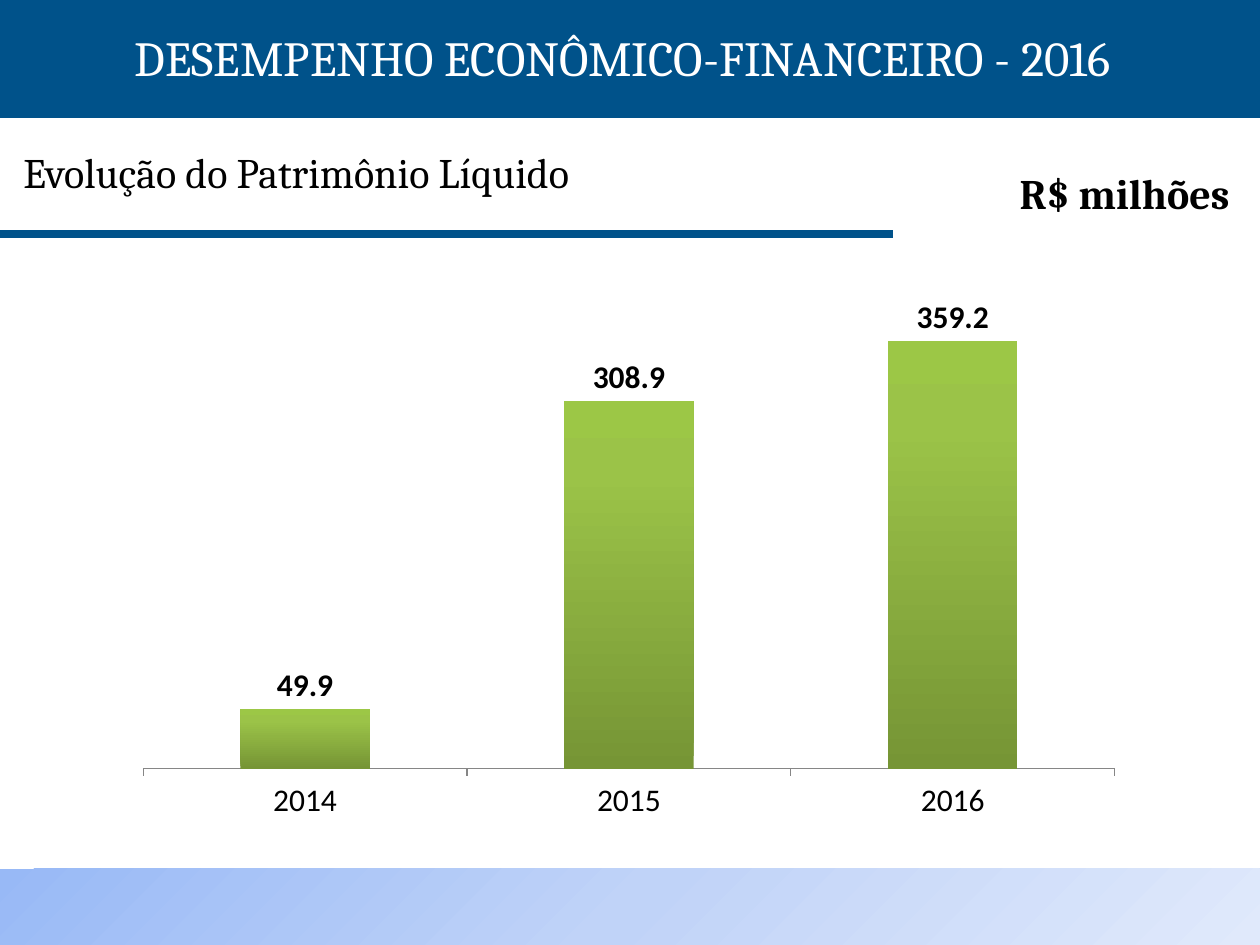
from copy import deepcopy
from typing import NamedTuple

from lxml.etree import SubElement
from pptx import Presentation
from pptx.chart.data import CategoryChartData
from pptx.dml.color import RGBColor
from pptx.dml.fill import FillFormat
from pptx.enum.chart import XL_CHART_TYPE as ChartType, XL_LABEL_POSITION as LabelPos
from pptx.enum.chart import XL_TICK_MARK as Tick
from pptx.enum.shapes import MSO_CONNECTOR as Connector, MSO_SHAPE as Shape
from pptx.enum.text import MSO_ANCHOR as Anchor, PP_ALIGN as Align
from pptx.oxml.ns import qn
from pptx.util import Emu, Pt

PX = 914400 // 126
BLUE = RGBColor(0x00, 0x52, 0x8A)
WHITE = RGBColor(0xFF, 0xFF, 0xFF)
BLACK = RGBColor(0x00, 0x00, 0x00)
AXIS_GRAY = RGBColor(0x86, 0x86, 0x86)


class Box(NamedTuple):
    left: int
    top: int
    width: int
    height: int

    def emu(self) -> list[Emu]:
        return [Emu(v * PX) for v in self]


class Stop(NamedTuple):
    position: int
    color: RGBColor


class Label(NamedTuple):
    box: Box
    text: str
    size: int
    color: RGBColor = BLACK
    align: Align = Align.LEFT
    anchor: Anchor = Anchor.MIDDLE
    bold: bool = False


FOOTER_STOPS = [
    Stop(0, RGBColor(0x98, 0xB9, 0xF6)),
    Stop(50, RGBColor(0xC0, 0xD3, 0xF8)),
    Stop(100, RGBColor(0xE0, 0xE9, 0xFB)),
]
BAR_STOPS = [
    Stop(0, RGBColor(0x76, 0x95, 0x35)),
    Stop(80, RGBColor(0x9B, 0xC3, 0x48)),
    Stop(100, RGBColor(0x9C, 0xC7, 0x46)),
]
LABELS = [
    Label(Box(11, 116, 1144, 111), "Evolução do Patrimônio Líquido", 24),
    Label(Box(968, 158, 274, 69), "R$ milhões", 24, align=Align.RIGHT, bold=True),
    Label(Box(5, 21, 1235, 72), "DESEMPENHO ECONÔMICO-FINANCEIRO - 2016", 28,
          WHITE, Align.CENTER, Anchor.TOP),
]
EQUITY = {"2014": 49.9, "2015": 308.9, "2016": 359.2}


def set_gradient(fill: FillFormat, element, stops: list[Stop], angle: int) -> None:
    """Fill with the stops; the angle runs counter-clockwise."""
    fill.gradient()
    fill.gradient_angle = angle
    gs_list = next(element.iter(qn("a:gsLst")))
    while len(gs_list) < len(stops):
        gs_list.append(deepcopy(gs_list[-1]))
    for gs, stop in zip(fill.gradient_stops, stops):
        gs.position = stop.position / 100
        gs.color.rgb = stop.color


def add_band(slide, box: Box):
    s = slide.shapes.add_shape(Shape.RECTANGLE, *box.emu())
    s.shadow.inherit = False
    s.line.fill.background()
    return s


def add_rule(slide, y: int, width: int) -> None:
    rule = slide.shapes.add_connector(
        Connector.STRAIGHT, 0, Emu(y * PX), Emu(width * PX), Emu(y * PX))
    rule.line.color.rgb = BLUE
    rule.line.width = Pt(4.5)
    SubElement(rule.line._get_or_add_ln().getparent(), qn("a:effectLst"))


def add_label(slide, label: Label) -> None:
    tf = slide.shapes.add_textbox(*label.box.emu()).text_frame
    tf.word_wrap = True
    tf.vertical_anchor = label.anchor
    tf.text = label.text
    p = tf.paragraphs[0]
    p.alignment = label.align
    font = p.runs[0].font
    font.name, font.size, font.bold = "Cambria", Pt(label.size), label.bold
    font.color.rgb = label.color


def add_equity_chart(slide, box: Box) -> None:
    data = CategoryChartData(number_format="0.0")
    data.categories = list(EQUITY)
    data.add_series("Series 1", list(EQUITY.values()))
    chart = slide.shapes.add_chart(ChartType.COLUMN_CLUSTERED, *box.emu(), data).chart
    chart.has_legend = False
    chart.has_title = False
    chart.font.name, chart.font.size = "Calibri", Pt(18)
    chart.font.color.rgb = BLACK

    value_axis = chart.value_axis
    value_axis.visible = False
    value_axis.has_major_gridlines = False
    value_axis.minimum_scale, value_axis.maximum_scale = 0, 400
    category_axis = chart.category_axis
    category_axis.major_tick_mark = Tick.OUTSIDE
    category_axis.format.line.color.rgb = AXIS_GRAY

    plot = chart.plots[0]
    plot.gap_width = 150
    plot.vary_by_categories = False
    plot.has_data_labels = True
    labels = plot.data_labels
    labels.show_value = True
    labels.number_format, labels.number_format_is_linked = "0.0", False
    labels.position = LabelPos.OUTSIDE_END
    labels.font.name, labels.font.size, labels.font.bold = "Calibri", Pt(18), True
    labels.font.color.rgb = BLACK
    bars = plot.series[0]
    set_gradient(bars.format.fill, bars._element, BAR_STOPS, 90)


def main() -> None:
    prs = Presentation()
    prs.slide_width, prs.slide_height = Emu(1260 * PX), Emu(945 * PX)
    slide = prs.slides.add_slide(prs.slide_layouts[6])

    footer = add_band(slide, Box(0, 869, 1260, 76))
    set_gradient(footer.fill, footer._element, FOOTER_STOPS, 315)
    header = add_band(slide, Box(0, 0, 1260, 118))
    header.fill.solid()
    header.fill.fore_color.rgb = BLUE

    add_rule(slide, 234, 893)
    add_equity_chart(slide, Box(123, 282, 1012, 548))
    for label in LABELS:
        add_label(slide, label)
    prs.save("out.pptx")


if __name__ == "__main__":
    main()
